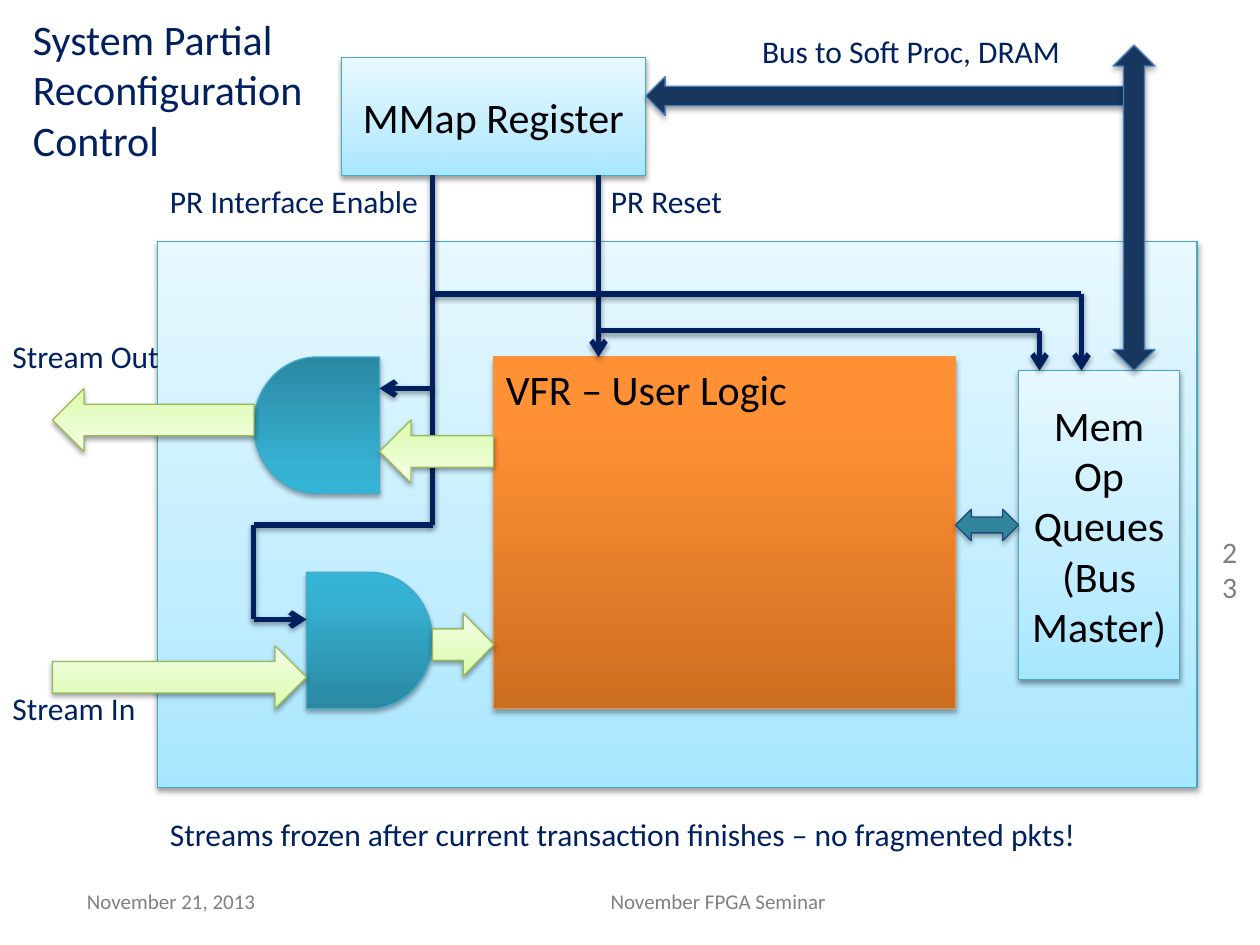
from dataclasses import dataclass

from lxml.etree import SubElement
from pptx import Presentation
from pptx.dml.color import RGBColor
from pptx.enum.shapes import MSO_CONNECTOR as Conn, MSO_SHAPE as Shape
from pptx.enum.text import MSO_ANCHOR as Anchor, MSO_AUTO_SIZE as AutoSize, PP_ALIGN as Align
from pptx.oxml.ns import qn
from pptx.util import Inches, Pt

COLUMNS, ROWS = 120, 90


@dataclass(frozen=True)
class Look:
    """Fill (one colour, or gradient stops from bottom to top), line and shadow."""
    fill: object
    line: str
    shadow: tuple  # opacity %, distance in points


SOFT, FIRM = (38, 1.6), (35, 1.8)


@dataclass(frozen=True)
class Theme:
    font: str = "Calibri"
    ink: str = "002060"
    black: str = "000000"
    muted: str = "808080"
    big: int = 24
    label: int = 18
    number: int = 17
    footer: int = 12
    wire: int = 3
    outline: float = 0.75
    panel: Look = Look(((0, "A7E6FF"), (35, "C1EDFF"), (100, "E7F8FF")), "46AAC5", SOFT)
    logic: Look = Look(((0, "CC6E20"), (80, "FF9034"), (100, "FF9136")), "F69240", FIRM)
    gate: Look = Look(((0, "2A88A2"), (80, "37B1D2"), (100, "34B4D6")), "46AAC5", FIRM)
    stream: Look = Look(((0, "DAFDA7"), (35, "E4FCC2"), (100, "F5FFE7")), "98B955", SOFT)
    link: Look = Look("31859C", "1F497D", FIRM)
    bus: Look = Look("17375E", "4B7EBC", FIRM)


class Diagram:
    def __init__(self, prs, theme):
        self.theme = theme
        self.cell_w = prs.slide_width / COLUMNS
        self.cell_h = prs.slide_height / ROWS
        self.s = prs.slides.add_slide(prs.slide_layouts[6])

    def at(self, *cells):
        """Turn alternating columns and rows into slide lengths."""
        return [int(c * (self.cell_h if i % 2 else self.cell_w)) for i, c in enumerate(cells)]

    def shadow(self, sp, opacity, distance):
        props = sp._element.spPr
        effects = props.find(qn("a:effectLst"))
        if effects is None:
            effects = SubElement(props, qn("a:effectLst"))
        outer = SubElement(effects, qn("a:outerShdw"), blurRad=str(Pt(3.1)),
                           dist=str(Pt(distance)), dir="5400000", rotWithShape="0")
        color = SubElement(outer, qn("a:srgbClr"), val="000000")
        SubElement(color, qn("a:alpha"), val=str(opacity * 1000))

    def gradient(self, sp, stops):
        sp.fill.gradient()
        sp.fill.gradient_angle = 90
        stop_list = sp._element.spPr.find(".//" + qn("a:gsLst"))
        for old in list(stop_list):
            stop_list.remove(old)
        for share, color in stops:
            stop = SubElement(stop_list, qn("a:gs"), pos=str(share * 1000))
            SubElement(stop, qn("a:srgbClr"), val=color)

    def set_text(self, tf, text, size, color, align, anchor):
        tf.text = text
        tf.word_wrap = True
        tf.vertical_anchor = anchor
        for p in tf.paragraphs:
            p.alignment = align
            for r in p.runs:
                r.font.name = self.theme.font
                r.font.size = Pt(size)
                r.font.color.rgb = RGBColor.from_string(color)

    def block(self, kind, box, look, text="", rotation=0, align=Align.CENTER, anchor=Anchor.MIDDLE):
        sp = self.s.shapes.add_shape(kind, *self.at(*box))
        sp.rotation = rotation
        sp.shadow.inherit = False
        if isinstance(look.fill, str):
            sp.fill.solid()
            sp.fill.fore_color.rgb = RGBColor.from_string(look.fill)
        else:
            self.gradient(sp, look.fill)
        sp.line.color.rgb = RGBColor.from_string(look.line)
        sp.line.width = Pt(self.theme.outline)
        self.shadow(sp, *look.shadow)
        if text:
            self.set_text(sp.text_frame, text, self.theme.big, self.theme.black, align, anchor)

    def wire(self, *points, arrow=True):
        """Join the points with straight lines, the last one with an arrowhead."""
        for start, end in zip(points, points[1:]):
            line = self.s.shapes.add_connector(Conn.STRAIGHT, *self.at(*start, *end))
            line.line.color.rgb = RGBColor.from_string(self.theme.ink)
            line.line.width = Pt(self.theme.wire)
            if arrow and end == points[-1]:
                SubElement(line._element.spPr.find(qn("a:ln")), qn("a:tailEnd"), type="arrow")
            self.shadow(line, *SOFT)

    def label(self, text, box, size=None, color=None, align=Align.LEFT, anchor=Anchor.TOP):
        tf = self.s.shapes.add_textbox(*self.at(*box)).text_frame
        self.set_text(tf, text, size or self.theme.label, color or self.theme.ink, align, anchor)
        if anchor == Anchor.TOP:
            tf.auto_size = AutoSize.SHAPE_TO_FIT_TEXT
        return tf

    def footer(self, text, box, align=Align.LEFT, size=None):
        return self.label(text, box, size or self.theme.footer, self.theme.muted, align, Anchor.MIDDLE)


def main():
    prs = Presentation()
    prs.slide_width, prs.slide_height = Inches(10), Inches(7.5)
    theme = Theme()
    d = Diagram(prs, theme)

    d.footer("November 21, 2013", (7.1, 83.4, 18.8, 4.8))
    d.footer("November FPGA Seminar", (27.8, 83.4, 81.2, 4.8), Align.CENTER)
    number = d.footer("23", (114.8, 42.1, 4.2, 16.1), Align.RIGHT, theme.number)
    number._txBody.bodyPr.set("vert", "wordArtVert")

    enable_x, reset_x, gate_out_x, gate_in_x = 41.2, 57, 24.15, 29.2
    register_bottom, logic_top, memory_top = 16.7, 34, 35.3
    enable_y, reset_y, turn_y = 28, 31.5, 50

    d.block(Shape.RECTANGLE, (15, 23, 99, 52), theme.panel)
    d.block(Shape.RECTANGLE, (47, logic_top, 44, 33.5), theme.logic, "VFR – User Logic",
            align=Align.LEFT, anchor=Anchor.TOP)
    d.block(Shape.RECTANGLE, (32.5, 5.5, 29, 11.2), theme.panel, "MMap Register")
    d.block(Shape.FLOWCHART_DELAY, (gate_in_x, 54.5, 12, 13), theme.gate)
    d.block(Shape.FLOWCHART_DELAY, (gate_out_x, logic_top, 12, 13), theme.gate, rotation=180)

    d.wire((enable_x, register_bottom), (enable_x, turn_y), (gate_out_x, turn_y),
           (gate_out_x, 59), (gate_in_x, 59))
    d.wire((enable_x, 37), (gate_out_x + 12, 37))

    for left, top, width, rotation in ((5, 61.5, 24.2, 0), (5, 37, 19.2, 180),
                                       (36.15, 40, 10.85, 180), (enable_x, 58.4, 5.85, 0)):
        d.block(Shape.RIGHT_ARROW, (left, top, width, 6), theme.stream, rotation=rotation)

    d.wire((reset_x, register_bottom), (reset_x, logic_top))
    d.block(Shape.RECTANGLE, (97, memory_top, 15.35, 29.4), theme.panel,
            "Mem Op Queues\n(Bus Master)")
    for start_x, end_x, y in ((reset_x, 99, reset_y), (enable_x, 103, enable_y)):
        d.wire((start_x, y), (end_x, y), (end_x, memory_top))

    d.block(Shape.LEFT_RIGHT_ARROW, (91, 48.5, 6, 3), theme.link)
    d.block(Shape.LEFT_ARROW, (61.5, 7.3, 45.8, 3.7), theme.bus)
    d.block(Shape.UP_DOWN_ARROW, (106, 4.3, 4, 31), theme.bus)

    d.label("System Partial Reconfiguration Control", (1.95, 0.7, 30.6, 15.7), theme.big)
    for text, left, top, width in (
            ("PR Interface Enable", 15, register_bottom, 26.2),
            ("PR Reset", reset_x, register_bottom, 26.2),
            ("Stream Out", 0, 31.5, 26.2),
            ("Stream In", 0, 65, 26.2),
            ("Bus to Soft Proc, DRAM", 71.4, 2.5, 34.6),
            ("Streams frozen after current transaction finishes – no fragmented pkts!", 15, 77, 95)):
        d.label(text, (left, top, width, 4.8))

    prs.save("out.pptx")


if __name__ == "__main__":
    main()
